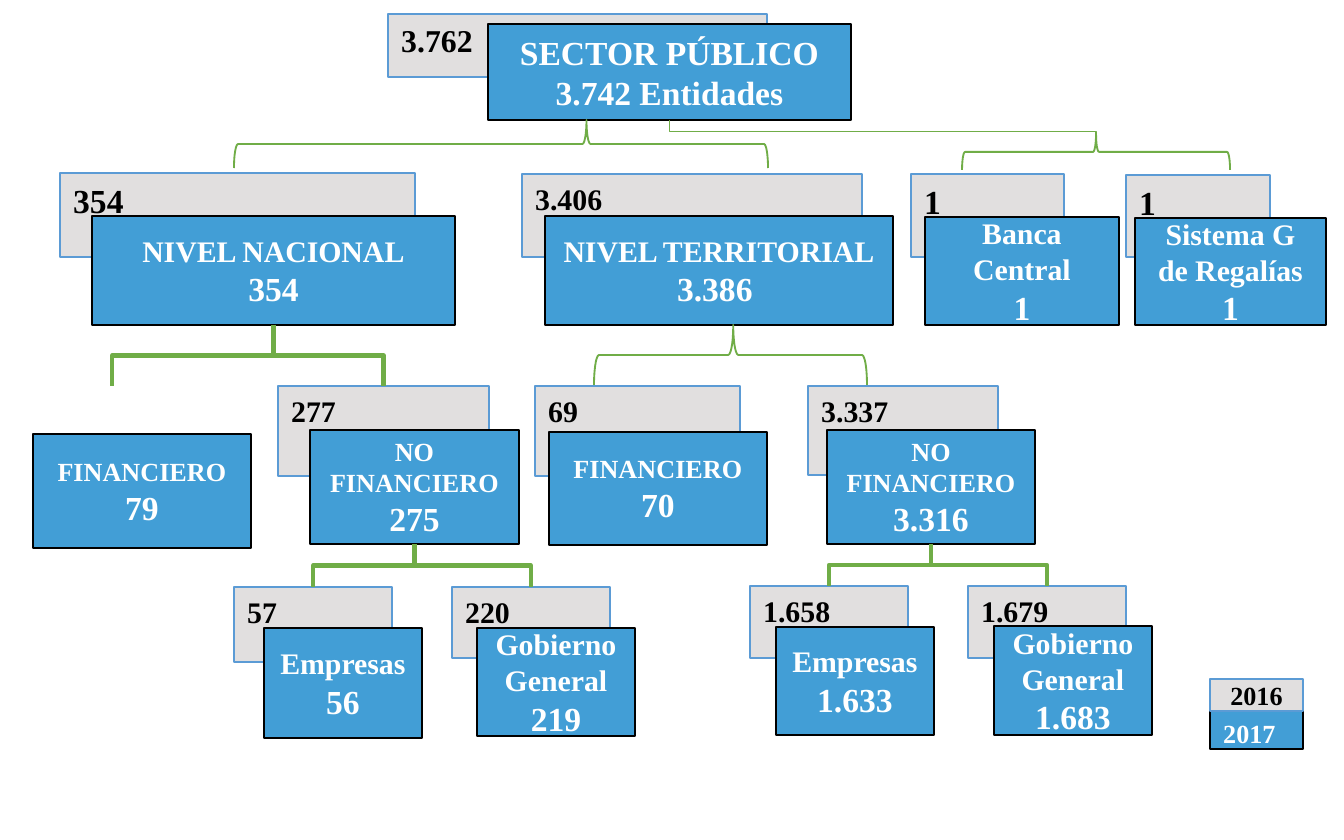
from dataclasses import dataclass
from typing import Optional

import lxml.etree
import pptx
import pptx.dml.color
import pptx.enum.shapes
import pptx.enum.text
import pptx.oxml.ns
import pptx.util

SCALE = 914400 * 10 / 1344  # EMU per px, slide is 1344 px wide
FONT = "Times New Roman"
BLUE, GREY, BLUE_EDGE, GREEN = "429ED6", "E1DFDF", "5B9BD5", "70AD47"
BLACK, WHITE = "000000", "FFFFFF"
CENTER = pptx.enum.text.PP_ALIGN.CENTER
LEFT = pptx.enum.text.PP_ALIGN.LEFT
TOP = pptx.enum.text.MSO_ANCHOR.TOP
MIDDLE = pptx.enum.text.MSO_ANCHOR.MIDDLE
SHAPES = pptx.enum.shapes.MSO_SHAPE


@dataclass
class Box:
    x: int
    y: int
    width: int
    height: int


@dataclass
class Entity:
    """A blue 2017 card, with the grey 2016 card behind it."""
    key: str
    title: list[str]
    count: str
    front: Box
    title_size: int = 16
    previous: str = ""
    back: Optional[Box] = None
    previous_size: int = 16


@dataclass
class Brace:
    box: Box
    tip: float  # position of the tip, as a share from the right end


ENTITIES = [
    Entity("sector", ["SECTOR PÚBLICO"], "3.742 Entidades", Box(488, 24, 363, 96), 18,
           "3.762", Box(388, 14, 379, 63), 17),
    Entity("national", ["NIVEL NACIONAL"], "354", Box(92, 216, 363, 109), 16,
           "354", Box(60, 173, 355, 84), 18),
    Entity("territorial", ["NIVEL TERRITORIAL"], "3.386 ", Box(545, 216, 348, 109), 16,
           "3.406", Box(522, 174, 340, 83)),
    Entity("bank", ["Banca Central"], "1", Box(925, 217, 194, 108), 16,
           "1", Box(911, 174, 153, 83), 18),
    Entity("royalties", ["Sistema G de Regalías"], "1", Box(1135, 218, 191, 107), 16,
           "1", Box(1126, 175, 144, 82), 18),
    Entity("national financial", ["FINANCIERO"], "79", Box(33, 434, 218, 114), 14),
    Entity("national other", ["NO FINANCIERO"], "275", Box(310, 430, 209, 114), 14,
           "277", Box(278, 386, 211, 90)),
    Entity("territorial financial", ["FINANCIERO"], "70", Box(549, 432, 218, 113), 14,
           "69", Box(535, 386, 205, 90)),
    Entity("territorial other", ["NO FINANCIERO"], "3.316", Box(827, 430, 208, 114), 14,
           "3.337", Box(808, 386, 190, 89)),
    Entity("national firms", ["Empresas"], "56", Box(264, 628, 158, 110), 16,
           "57", Box(234, 587, 158, 75)),
    Entity("national government", ["Gobierno", "General"], "219", Box(477, 628, 158, 108), 16,
           "220", Box(452, 587, 158, 71)),
    Entity("territorial firms", ["Empresas"], "1.633", Box(776, 627, 158, 108), 16,
           "1.658", Box(750, 586, 158, 72)),
    Entity("territorial government", ["Gobierno", "General"], "1.683", Box(994, 626, 158, 109), 16,
           "1.679", Box(968, 586, 158, 72)),
]
BRANCHES = [
    ("national", "national other"),
    ("national other", "national firms"),
    ("national other", "national government"),
    ("territorial other", "territorial firms"),
    ("territorial other", "territorial government"),
]
BRACES = [
    Brace(Box(594, 325, 273, 60), 0.49),
    Brace(Box(234, 120, 534, 48), 0.34),
    Brace(Box(962, 134, 268, 36), 0.5),
]


def emu(px: float) -> pptx.util.Emu:
    return pptx.util.Emu(round(px * SCALE))


def color(value: str) -> pptx.dml.color.RGBColor:
    return pptx.dml.color.RGBColor.from_string(value)


def write_text(shape, lines: list[str], *, sizes: list[int], ink: str,
               align=CENTER, anchor=MIDDLE) -> None:
    frame = shape.text_frame
    frame.word_wrap = True
    frame.vertical_anchor = anchor
    for index, (line, size) in enumerate(zip(lines, sizes)):
        paragraph = frame.paragraphs[0] if index == 0 else frame.add_paragraph()
        paragraph.alignment = align
        run = paragraph.add_run()
        run.text = line
        run.font.name = FONT
        run.font.size = pptx.util.Pt(size)
        run.font.bold = True
        run.font.color.rgb = color(ink)


def add_box(slide, box: Box, fill: str, edge: str):
    shape = slide.shapes.add_shape(SHAPES.RECTANGLE, emu(box.x), emu(box.y),
                                   emu(box.width), emu(box.height))
    shape.shadow.inherit = False
    shape.fill.solid()
    shape.fill.fore_color.rgb = color(fill)
    shape.line.color.rgb = color(edge)
    shape.line.width = pptx.util.Pt(1)
    return shape


def add_entity(slide, entity: Entity) -> tuple:
    back = None
    if entity.back:
        back = add_box(slide, entity.back, GREY, BLUE_EDGE)
        write_text(back, [entity.previous], sizes=[entity.previous_size], ink=BLACK,
                   align=LEFT, anchor=TOP)
    front = add_box(slide, entity.front, BLUE, BLACK)
    write_text(front, entity.title + [entity.count],
               sizes=[entity.title_size] * len(entity.title) + [18], ink=WHITE)
    return front, back


def add_elbow(slide, parent, *, child=None, end: tuple = (0, 0),
              weight: float = 2.25, bend: float = 0.5) -> None:
    """Go down from the parent, across, and down to the child or the end point."""
    connector = slide.shapes.add_connector(pptx.enum.shapes.MSO_CONNECTOR.ELBOW,
                                           0, 0, emu(end[0]), emu(end[1]))
    connector.begin_connect(parent, 2)
    if child is not None:
        connector.end_connect(child, 0)
    connector.line.color.rgb = color(GREEN)
    connector.line.width = pptx.util.Pt(weight)
    start_x, start_y = connector.begin_x, connector.begin_y
    end_x, end_y = connector.end_x, connector.end_y
    # The preset runs across first, so it is turned a quarter to run down first
    across, down = abs(end_x - start_x), end_y - start_y
    connector.left = (start_x + end_x - down) // 2
    connector.top = (start_y + end_y - across) // 2
    connector.width, connector.height = down, across
    properties = connector.element.spPr
    transform = properties.find(pptx.oxml.ns.qn("a:xfrm"))
    rightward = end_x > start_x
    transform.set("rot", str((270 if rightward else 90) * 60000))
    transform.set("flipH", "1" if rightward else "0")
    transform.set("flipV", "0")
    geometry = properties.find(pptx.oxml.ns.qn("a:prstGeom"))
    adjustments = geometry.find(pptx.oxml.ns.qn("a:avLst"))
    lxml.etree.SubElement(adjustments, pptx.oxml.ns.qn("a:gd"),
                          name="adj1", fmla=f"val {round(bend * 100000)}")
    lxml.etree.SubElement(properties, pptx.oxml.ns.qn("a:effectLst"))


def add_brace(slide, brace: Brace) -> None:
    box = brace.box
    shift = (box.width - box.height) / 2  # a left brace turned to point upwards
    shape = slide.shapes.add_shape(SHAPES.LEFT_BRACE, emu(box.x + shift), emu(box.y - shift),
                                   emu(box.height), emu(box.width))
    shape.rotation = 90
    shape.adjustments[1] = brace.tip
    shape.shadow.inherit = False
    shape.fill.background()
    shape.line.color.rgb = color(GREEN)
    shape.line.width = pptx.util.Pt(1)


def main() -> None:
    presentation = pptx.Presentation()
    presentation.slide_width = pptx.util.Inches(10)
    presentation.slide_height = pptx.util.Inches(6.25)
    slide = presentation.slides.add_slide(presentation.slide_layouts[6])

    # Entity cards
    cards = {entity.key: add_entity(slide, entity) for entity in ENTITIES}

    # Branches between levels
    for parent, child in BRANCHES:
        add_elbow(slide, cards[parent][0], child=cards[child][1])
    add_elbow(slide, cards["national"][0], end=(112, 386))
    add_elbow(slide, cards["sector"][0], end=(1096, 134), weight=1, bend=0.82)
    for brace in BRACES:
        add_brace(slide, brace)

    # Year legend
    current = add_box(slide, Box(1210, 711, 93, 38), BLUE, BLACK)
    write_text(current, ["2017"], sizes=[14], ink=WHITE, align=LEFT, anchor=TOP)
    previous = add_box(slide, Box(1210, 679, 93, 32), GREY, BLUE_EDGE)
    write_text(previous, ["2016"], sizes=[14], ink=BLACK)

    presentation.save("out.pptx")


if __name__ == "__main__":
    main()
